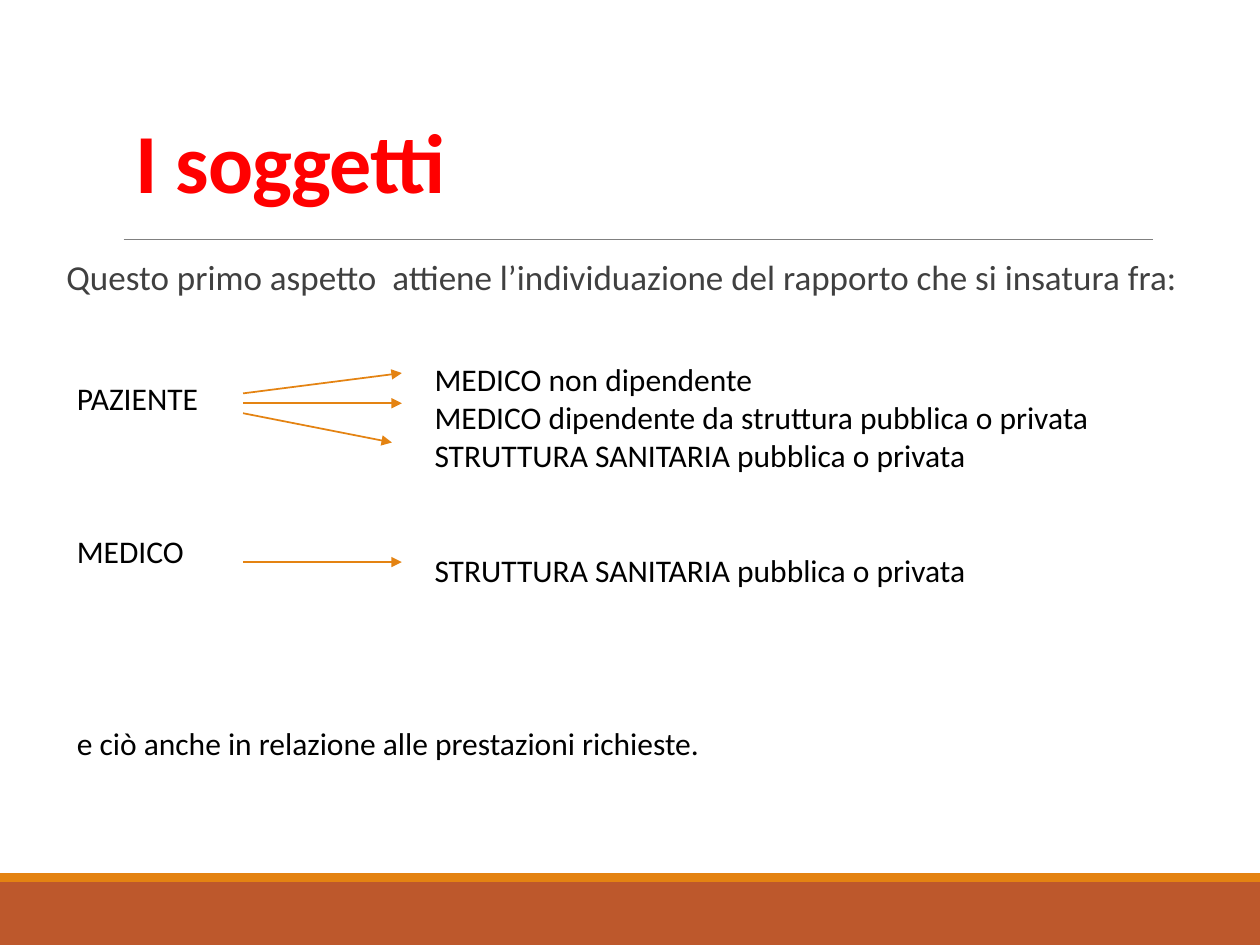
from pptx import Presentation
from pptx.dml.color import RGBColor
from pptx.enum.shapes import MSO_CONNECTOR, MSO_SHAPE
from pptx.enum.text import MSO_ANCHOR
from pptx.oxml.ns import qn
from pptx.util import Cm, Pt
from lxml.etree import SubElement

RUST = RGBColor(0xBD, 0x58, 0x2C)
ORANGE = RGBColor(0xE4, 0x83, 0x12)
GREY = RGBColor(0x80, 0x80, 0x80)
DARK = RGBColor(0x40, 0x40, 0x40)
RED = RGBColor(0xFF, 0x00, 0x00)
BLACK = RGBColor(0x00, 0x00, 0x00)

FONT = "Calibri"
LINE_PITCH = 22  # points taken by one line of 18 pt text


def add_bar(page, left, top, width, height, color):
    bar = page.shapes.add_shape(
        MSO_SHAPE.RECTANGLE, Cm(left), Cm(top), Cm(width), Cm(height))
    bar.shadow.inherit = False
    bar.fill.solid()
    bar.fill.fore_color.rgb = color
    bar.line.fill.background()


def add_line(page, start, end, color, width, arrow=False):
    line = page.shapes.add_connector(
        MSO_CONNECTOR.STRAIGHT, *(Cm(value) for value in (*start, *end)))
    line.line.color.rgb = color
    line.line.width = Pt(width)
    if arrow:
        SubElement(line.line._get_or_add_ln(), qn("a:tailEnd"), type="triangle")
    SubElement(line._element.spPr, qn("a:effectLst"))


def add_text(page, left, top, width, height, lines, size=18, color=BLACK):
    """Write lines given as (text, number of line heights left free above)."""
    box = page.shapes.add_textbox(Cm(left), Cm(top), Cm(width), Cm(height))
    frame = box.text_frame
    frame.word_wrap = True
    for index, (text, gap) in enumerate(lines):
        para = frame.paragraphs[0] if index == 0 else frame.add_paragraph()
        para.text = text
        para.space_before = Pt(gap * LINE_PITCH)
        para.font.name = FONT
        para.font.size = Pt(size)
        para.font.color.rgb = color
    return frame


def add_heading(page, left, top, width, height):
    frame = add_text(page, left, top, width, height,
                     [("I soggetti", 0)], 48, RED)
    frame.vertical_anchor = MSO_ANCHOR.BOTTOM
    para = frame.paragraphs[0]
    para.line_spacing = 0.85
    para.font.bold = True
    para.runs[0]._r.get_or_add_rPr().set("spc", "-50")
    rule_top = top + height + 0.46
    add_line(page, (left, rule_top), (left + 20.75, rule_top), GREY, 0.5)


def add_intro(page, left, top, width, height):
    text = "Questo primo aspetto  attiene l’individuazione del rapporto che si insatura fra:"
    frame = add_text(page, left, top, width, height, [(text, 0)], 20, DARK)
    frame.margin_right = 0
    frame.paragraphs[0].line_spacing = 0.9


def add_relations(page, left, top):
    """Parties on the left, their counterparts on the right, arrows between."""
    add_text(page, left, top + 0.38, 18.39, 7.95, [
        ("PAZIENTE", 0),
        ("MEDICO", 3),
        ("e ciò anche in relazione alle prestazioni richieste.", 4),
    ])
    add_text(page, left + 7.21, top, 14.2, 6.4, [
        ("MEDICO non dipendente", 0),
        ("MEDICO dipendente da struttura pubblica o privata", 0),
        ("STRUTTURA SANITARIA pubblica o privata", 0),
        ("STRUTTURA SANITARIA pubblica o privata", 2),
    ])
    arrows = [(0.79, 6.8, 0.38), (0.99, 6.8, 0.99),
              (1.19, 6.6, 1.78), (4.19, 6.8, 4.19)]
    for start_y, end_x, end_y in arrows:
        add_line(page, (left + 3.6, top + start_y),
                 (left + end_x, top + end_y), ORANGE, 1, arrow=True)


def add_footer(page, left, top, width, height):
    stripe = 0.18
    add_bar(page, left, top + stripe, width, height - stripe, RUST)
    add_bar(page, left, top, width, stripe, ORANGE)


def main():
    deck = Presentation()
    deck.slide_width, deck.slide_height = Cm(25.4), Cm(19.05)
    page = deck.slides.add_slide(deck.slide_layouts[6])
    add_footer(page, 0, 17.6, 25.4, 1.45)
    add_heading(page, 2.49, 0.33, 20.96, 4.04)
    add_intro(page, 1.09, 5.13, 23.01, 1.8)
    add_relations(page, 1.3, 7.14)
    deck.save("out.pptx")


if __name__ == "__main__":
    main()
